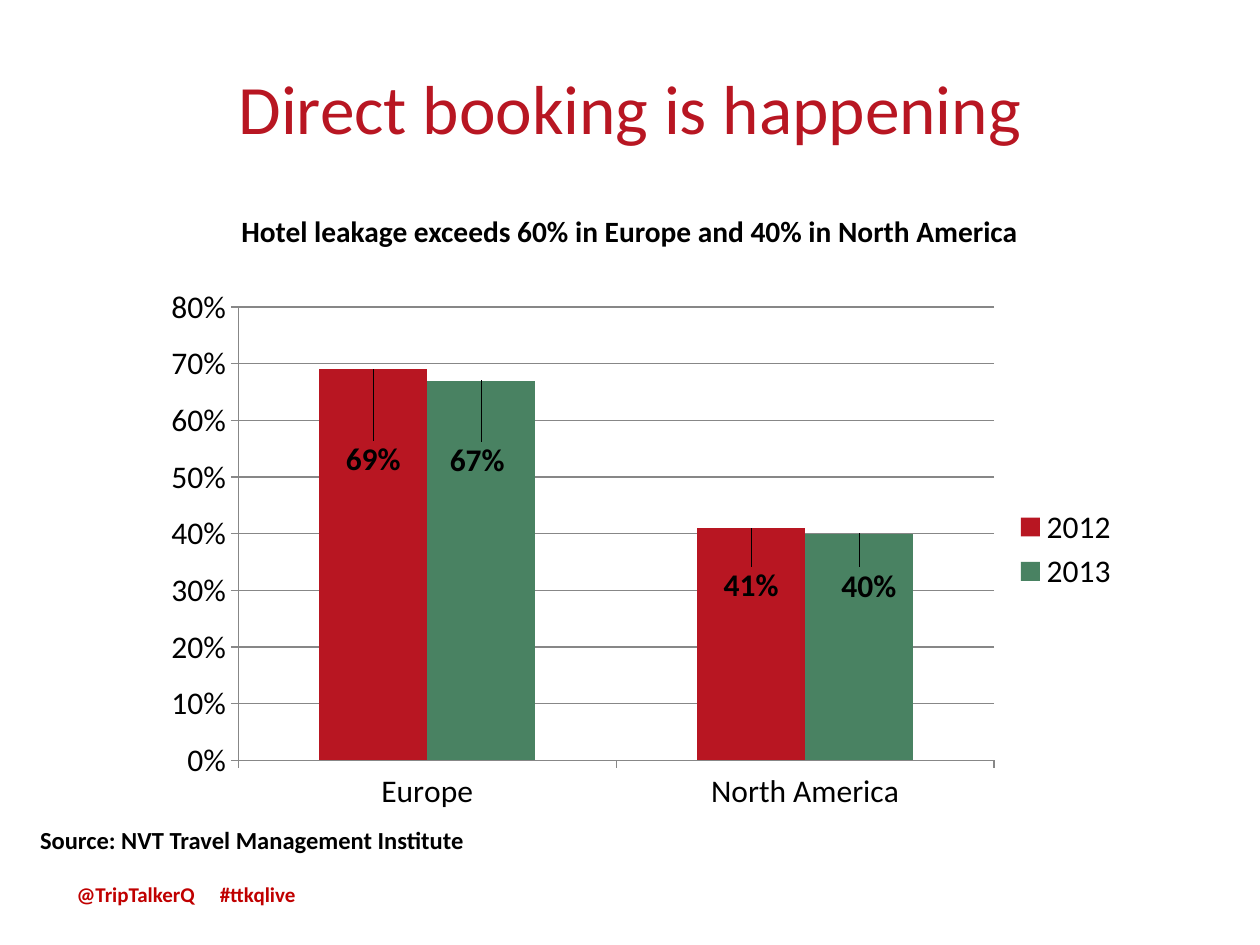
from lxml import etree
from pptx import Presentation
from pptx.chart.data import CategoryChartData as Data
from pptx.dml.color import RGBColor as RGB
from pptx.enum.chart import XL_CHART_TYPE as Kind, XL_LABEL_POSITION as Spot
from pptx.enum.chart import XL_LEGEND_POSITION as Side, XL_TICK_MARK as Tick
from pptx.enum.text import MSO_ANCHOR as Anchor, PP_ALIGN as Align
from pptx.oxml.ns import qn
from pptx.util import Pt

HUES = {"red": "B81622", "green": "498262", "foot": "C00000", "ink": "000000", "line": "878787"}


def write(frame, text, size=18, hue="ink", bold=False, align=Align.LEFT,
          anchor=Anchor.TOP, wrap=True, tab=None):
    frame.word_wrap = wrap
    frame.vertical_anchor = anchor
    para = frame.paragraphs[0]
    para.text = text
    para.alignment = align
    if tab:
        stops = etree.SubElement(para._p.get_or_add_pPr(), qn("a:tabLst"))
        etree.SubElement(stops, qn("a:tab"), pos=str(Pt(tab)), algn="l")
    font = para.runs[0].font
    font.name, font.size, font.bold = "Calibri", Pt(size), bold
    font.color.rgb = RGB.from_string(HUES[hue])


def layout(**parts):
    node = etree.Element(qn("c:layout"))
    manual = etree.SubElement(node, qn("c:manualLayout"))
    for name, val in parts.items():
        etree.SubElement(manual, qn("c:" + name), val=str(val))
    return node


class Deck:
    def __init__(self):
        self.file = Presentation()
        self.file.slide_width, self.file.slide_height = Pt(720), Pt(540)
        self.slide = self.file.slides.add_slide(self.file.slide_layouts[5])

    def title(self, text, box, **style):
        shape = self.slide.shapes.title
        shape.left, shape.top, shape.width, shape.height = map(Pt, box)
        write(shape.text_frame, text, **style)

    def text(self, text, box, **style):
        shape = self.slide.shapes.add_textbox(*map(Pt, box))
        write(shape.text_frame, text, **style)

    def bars(self, cats, rows, box):
        data = Data(number_format="0%")
        data.categories = cats
        for name, vals, _, _ in rows:
            data.add_series(name, vals)
        frame = self.slide.shapes.add_chart(Kind.COLUMN_CLUSTERED, *map(Pt, box), data)
        chart = frame.chart
        chart.has_title = False
        chart.font.name, chart.font.size = "Calibri", Pt(18)
        chart.font.color.rgb = RGB.from_string(HUES["ink"])
        chart.has_legend = True
        chart.legend.position = Side.RIGHT
        chart.legend.include_in_layout = False
        self.axes(chart)
        plot = chart.plots[0]
        plot.gap_width, plot.overlap, plot.vary_by_categories = 150, 0, False
        for ser, (_, _, hue, moves) in zip(plot.series, rows):
            ser.format.fill.solid()
            ser.format.fill.fore_color.rgb = RGB.from_string(HUES[hue])
            self.labels(ser, moves)
        area = chart._chartSpace.find(".//" + qn("c:plotArea"))
        for old in area.findall(qn("c:layout")):
            area.remove(old)
        area.insert(0, layout(layoutTarget="inner", xMode="edge", yMode="edge",
                              x=0.09, y=0.055, w=0.77, h=0.833))

    def axes(self, chart):
        val = chart.value_axis
        val.minimum_scale, val.maximum_scale, val.major_unit = 0, 0.8, 0.1
        val.has_major_gridlines = True
        val.tick_labels.number_format = "0%"
        val.tick_labels.number_format_is_linked = False
        for axis in (val, chart.category_axis):
            axis.major_tick_mark = Tick.OUTSIDE
            axis.minor_tick_mark = Tick.NONE
        for item in (val, chart.category_axis, val.major_gridlines):
            item.format.line.width = Pt(0.75)
            item.format.line.color.rgb = RGB.from_string(HUES["line"])

    def labels(self, ser, moves):
        tags = ser.data_labels
        tags.show_value = True
        tags.number_format, tags.number_format_is_linked = "0%", False
        tags.font.bold, tags.font.size, tags.font.name = True, Pt(18), "Calibri"
        for spot in range(len(moves)):
            tag = ser.points[spot].data_label
            tag.position = Spot.OUTSIDE_END
            tag.font.bold, tag.font.size, tag.font.name = True, Pt(18), "Calibri"
        for node, (x, y) in zip(ser._element.iter(qn("c:dLbl")), moves):
            node.insert(1, layout(x=x, y=y))


def main():
    deck = Deck()
    deck.text("@TripTalkerQ\t#ttkqlive", (36.7, 500.4, 150, 21.6),
              size=12, hue="foot", bold=True, tab=81.8)
    deck.text("Hotel leakage exceeds 60% in Europe and 40% in North America",
              (74.9, 109.4, 569.5, 36), size=16.8, bold=True,
              align=Align.CENTER, anchor=Anchor.BOTTOM)
    deck.bars(("Europe", "North America"), (
        ("2012", (0.69, 0.41), "red", ((0, 0.21), (0, 0.15))),
        ("2013", (0.67, 0.4), "green", ((-0.004, 0.19), (0.01, 0.14))),
    ), (85.7, 158.4, 560.9, 311))
    deck.title("Direct booking is happening", (36, 32.4, 648, 56.9),
               size=39.6, hue="red", align=Align.CENTER, anchor=Anchor.MIDDLE)
    deck.text("Source: NVT Travel Management Institute", (15.8, 468, 260.6, 24.5),
              size=14, bold=True, wrap=False)
    deck.file.save("out.pptx")


if __name__ == "__main__":
    main()
